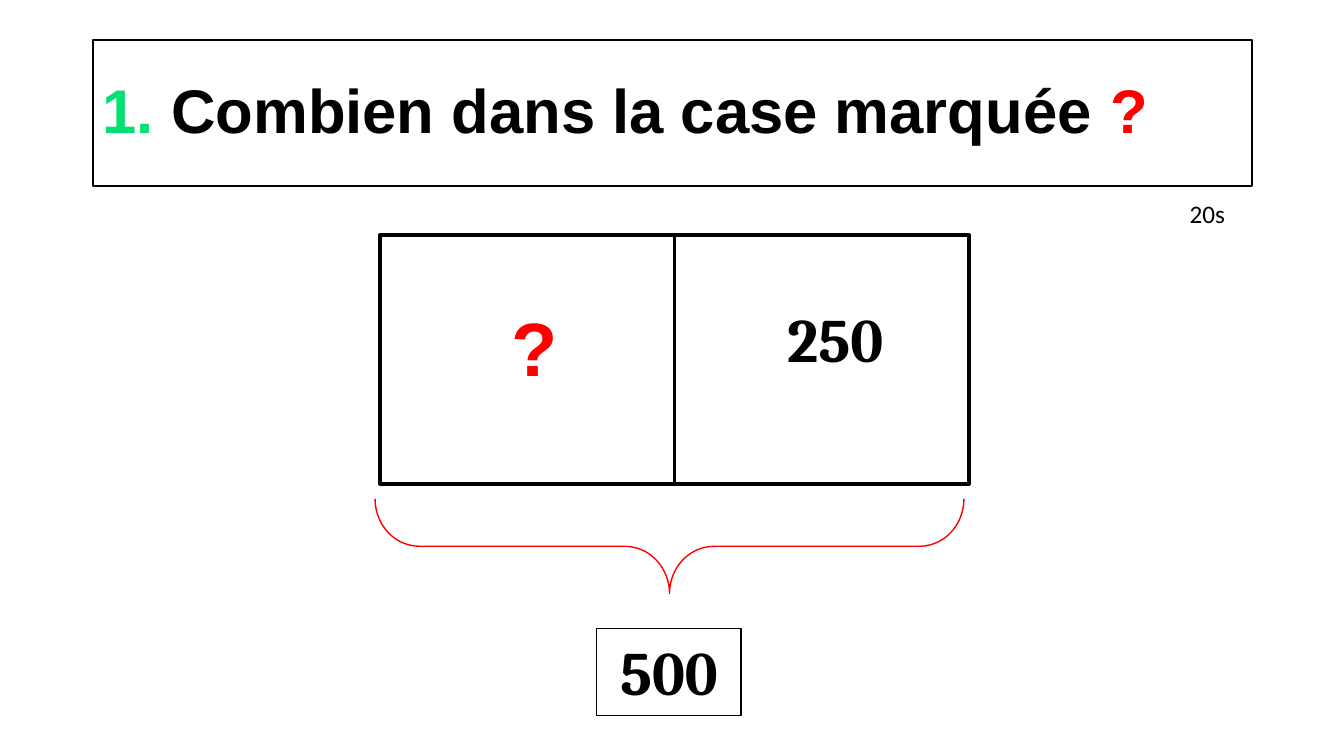
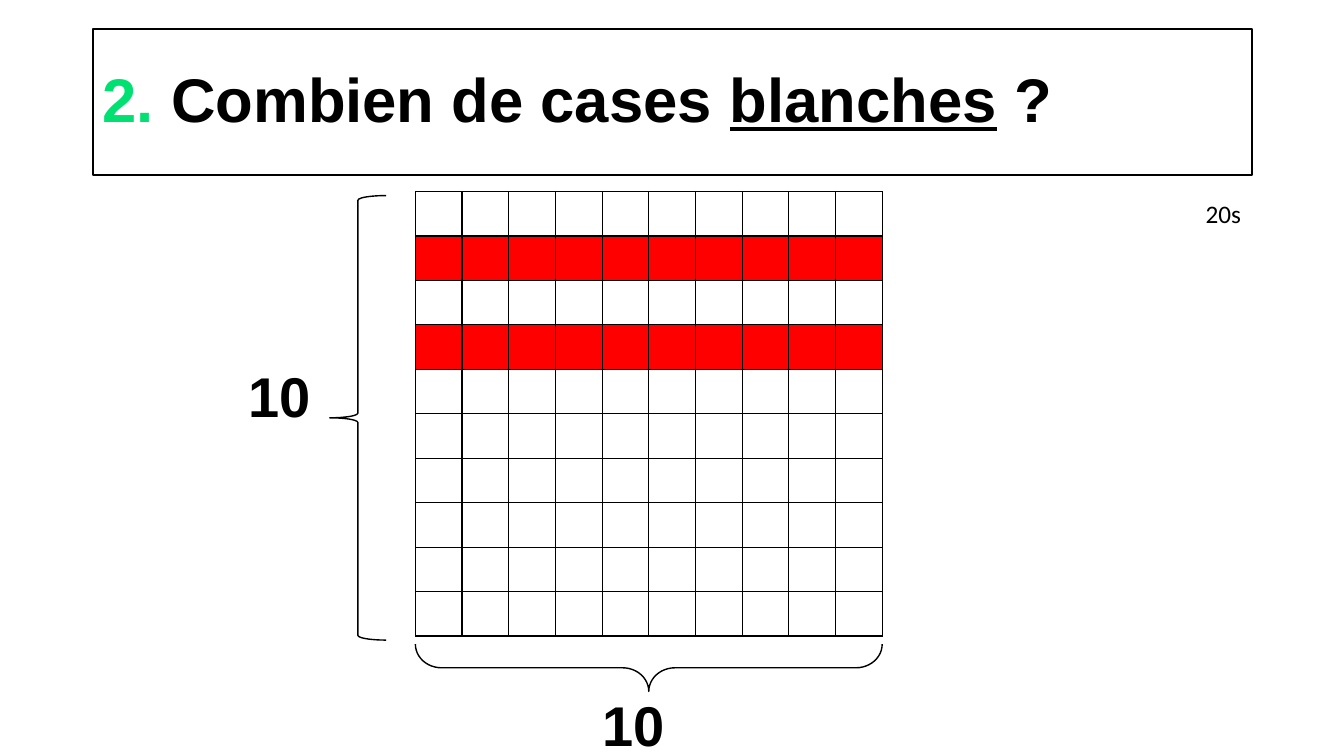
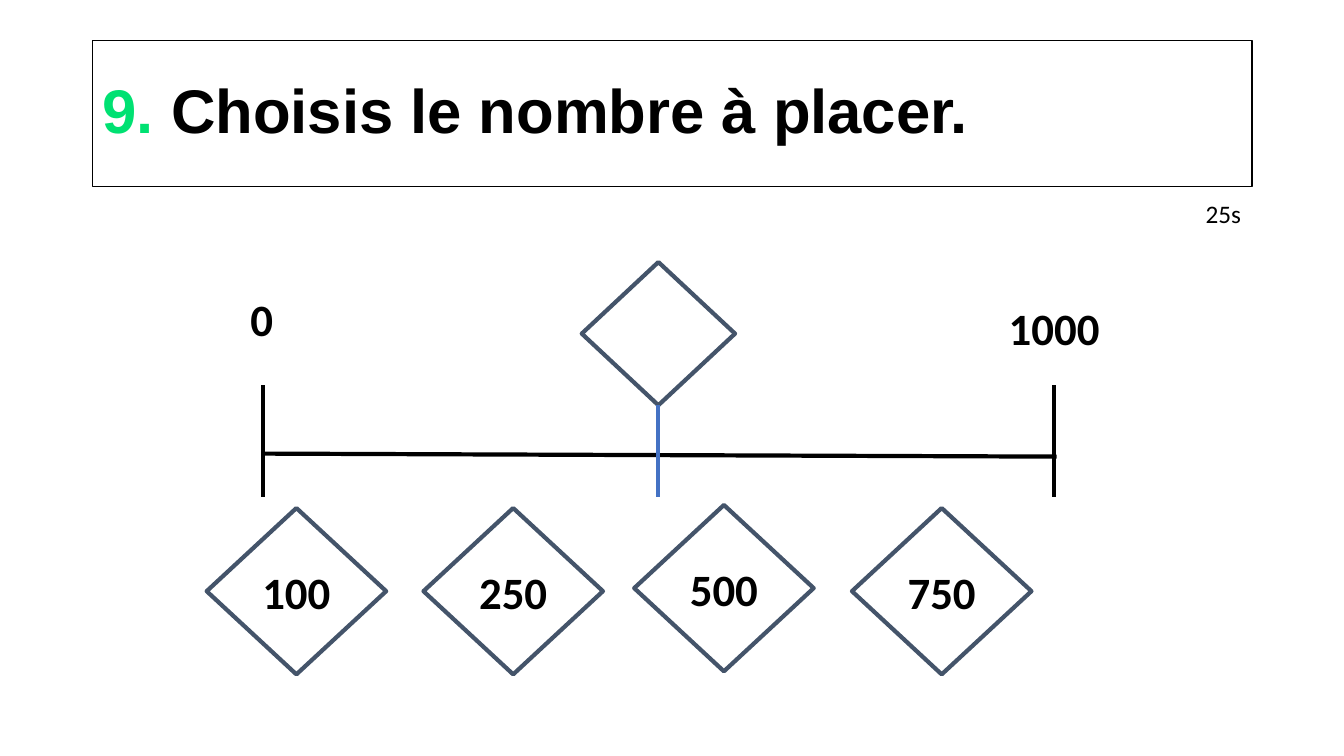
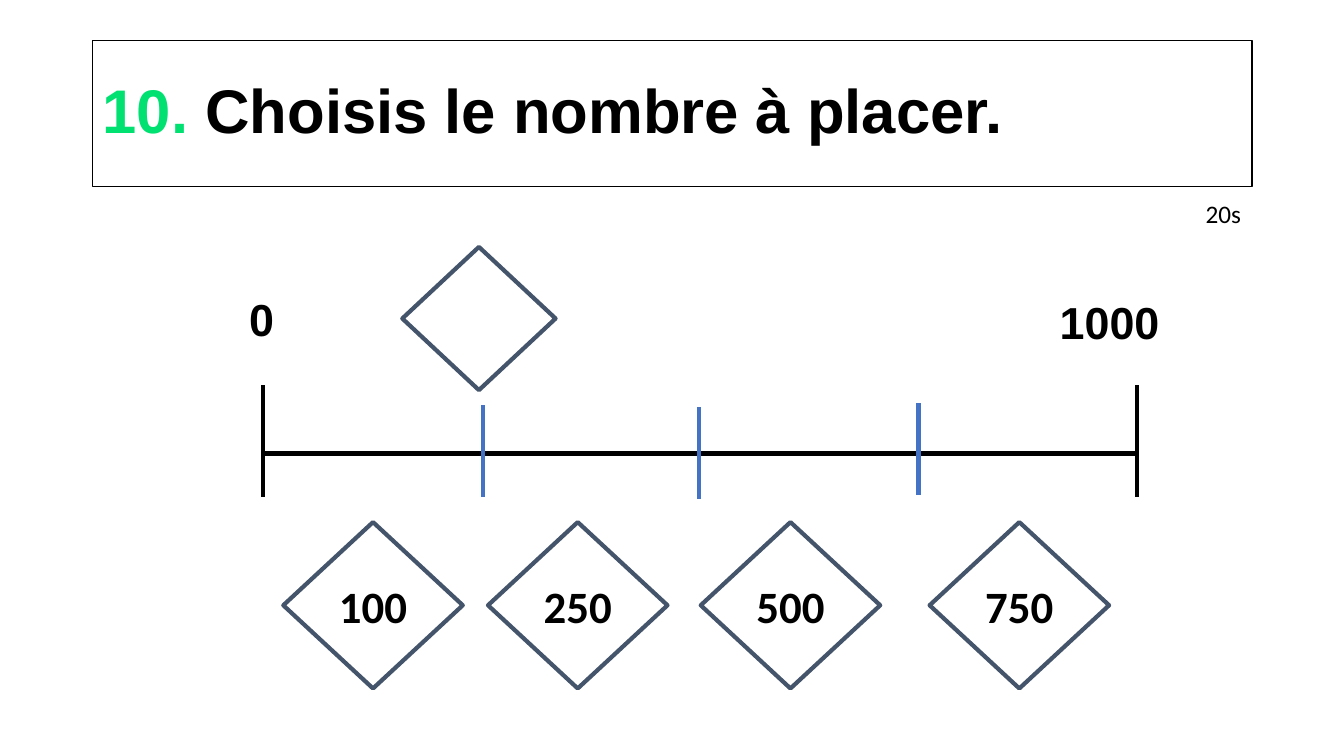
from lxml import etree
from pptx import Presentation
from pptx.dml.color import RGBColor
from pptx.enum.shapes import MSO_CONNECTOR, MSO_SHAPE as SHAPE
from pptx.enum.text import MSO_ANCHOR as ANCHOR, PP_ALIGN as ALIGN
from pptx.oxml.ns import qn
from pptx.util import Inches, Pt

# Shared look
BLACK = RGBColor(0x00, 0x00, 0x00)
WHITE = RGBColor(0xFF, 0xFF, 0xFF)
RED = RGBColor(0xFF, 0x00, 0x00)
GREEN = RGBColor(0x00, 0xE1, 0x72)
BLUE = RGBColor(0x44, 0x72, 0xC4)
SLATE = RGBColor(0x44, 0x54, 0x6A)
SLIDE_W, SLIDE_H = 13.33, 7.5
TITLE_LEFT, TITLE_W, TITLE_H = 0.92, 11.5, 1.45

# Bar model: two equal parts and their total
BAR = {
    "title": [("1. ", GREEN), ("Combien dans la case marquée ", BLACK), ("?", RED)],
    "title_top": 0.4, "title_line": 1.5, "time": "20s", "time_left": 11.7,
    "left": 3.77, "top": 2.33, "part": (2.92, 2.47), "parts": 2,
    "labels": [("?", (4.52, 2.94, 1.56, 1.01), 54, "Arial", RED),
               ("250", (7.57, 2.94, 1.43, 0.84), 44, "Cambria", BLACK)],
    "brace": (6.17, 2.5, 0.94, 5.84),
    "total": ("500", (5.92, 6.24, 1.43, 0.86)),
}

# Grid of squares with some red rows
GRID = {
    "title": [("2. ", GREEN), ("Combien de cases ", BLACK),
              ("blanches", BLACK, True), (" ?", BLACK)],
    "title_top": 0.29, "title_line": 1.5, "time": "20s", "time_left": 11.86,
    "at": (4.12, 1.9, 4.63, 4.41), "count": 10, "red_rows": (1, 3),
    # brace box, rotation, curve, position of the count
    "braces": [((3.27, 1.94, 0.56, 4.41), 0, 0.083, (2.37, 3.54)),
               ((6.2, 4.31, 0.47, 4.63), 270, 0.552, (5.88, 6.8))],
}

# Number lines: ends, marks and the answers to choose from
CHOICE = " Choisis le nombre à placer."
ANSWERS = ("100", "250", "500", "750")
NUMBER_LINES = [
    {
        "title": [("9.", GREEN), (CHOICE, BLACK)],
        "title_top": 0.4, "title_line": 1, "time": "25s", "time_left": 11.86,
        "axis": ((2.61, 4.5), (10.48, 4.53)), "ends": (2.61, 10.45),
        "end_font": "Calibri", "end_labels": [("0", (1.95, 2.84)), ("1000", (9.81, 2.93))],
        "target": (5.77, 2.6), "target_mark": 6.53, "marks": [],
        "answers": [(2.05, 5.04), (4.2, 5.04), (6.29, 5.01), (8.45, 5.04)],
    },
    {
        "title": [("10.", GREEN), (CHOICE, BLACK)],
        "title_top": 0.4, "title_line": 1, "time": "20s", "time_left": 11.86,
        "axis": ((2.61, 4.5), (11.28, 4.5)), "ends": (2.61, 11.28),
        "end_font": "Arial", "end_labels": [("0", (1.95, 2.84)), ("1000", (10.36, 2.87))],
        "target": (3.99, 2.45), "target_mark": None,
        "marks": [(4.79, 4.02), (6.93, 4.04), (9.11, 4.0)],
        "answers": [(2.81, 5.18), (4.84, 5.18), (6.95, 5.18), (9.22, 5.18)],
    },
]
END_TOP, END_BOTTOM, MARK_H = 3.82, 4.93, 0.91
TARGET_SIZE, ANSWER_SIZE, END_LABEL_SIZE = (1.52, 1.42), (1.78, 1.65), (1.29, 0.64)


def write(shape, runs, size, font, bold=True, align=ALIGN.CENTER,
          anchor=ANCHOR.TOP, wrap=True):
    frame = shape.text_frame
    frame.word_wrap = wrap
    frame.vertical_anchor = anchor
    paragraph = frame.paragraphs[0]
    paragraph.alignment = align
    paragraph.font.size = Pt(size)
    paragraph.font.name = font
    paragraph.font.bold = bold
    for text, color, *underline in runs:
        run = paragraph.add_run()
        run.text = text
        run.font.color.rgb = color
        if underline:
            run.font.underline = True
    return paragraph


def add_label(slide, box, text, size, font, color=BLACK, **style):
    label = slide.shapes.add_textbox(*map(Inches, box))
    write(label, [(text, color)], size, font, **style)


def add_outline(slide, kind, box, color, weight, fill=None):
    shape = slide.shapes.add_shape(kind, *map(Inches, box))
    shape.shadow.inherit = False
    if fill is None:
        shape.fill.background()
    else:
        shape.fill.solid()
        shape.fill.fore_color.rgb = fill
    shape.line.color.rgb = color
    shape.line.width = Pt(weight)
    return shape


def add_brace(slide, kind, box, rotation, curve, color):
    brace = add_outline(slide, kind, box, color, 1)
    brace.rotation = rotation
    brace.adjustments[0] = curve


def add_line(slide, start, end, color=BLACK):
    line = slide.shapes.add_connector(MSO_CONNECTOR.STRAIGHT, *map(Inches, start + end))
    line.line.color.rgb = color
    line.line.width = Pt(3)
    etree.SubElement(line._element.spPr, qn("a:effectLst"))
    return line


def add_slide(deck, content):
    """Blank slide with the framed question and its time limit."""
    slide = deck.slides.add_slide(deck.slide_layouts[6])
    box = (TITLE_LEFT, content["title_top"], TITLE_W, TITLE_H)
    title = add_outline(slide, SHAPE.RECTANGLE, box, BLACK, content["title_line"], WHITE)
    write(title, content["title"], 44, "Arial", align=ALIGN.LEFT,
          anchor=ANCHOR.MIDDLE).line_spacing = 0.9
    add_label(slide, (content["time_left"], 1.92, 0.56, 0.4), content["time"], 18,
              "Calibri", bold=False, align=ALIGN.LEFT, wrap=False)
    return slide


def set_borders(cell):
    properties = cell._tc.get_or_add_tcPr()
    for position, side in enumerate(("a:lnL", "a:lnR", "a:lnT", "a:lnB")):
        border = etree.Element(qn(side), w=str(Pt(1)))
        fill = etree.SubElement(border, qn("a:solidFill"))
        etree.SubElement(fill, qn("a:srgbClr"), val=str(BLACK))
        properties.insert(position, border)


def build_bar(deck, bar):
    slide = add_slide(deck, bar)
    width, height = bar["part"]
    for part in range(bar["parts"]):
        box = (bar["left"] + part * width, bar["top"], width, height)
        add_outline(slide, SHAPE.RECTANGLE, box, BLACK, 2.5)
    for text, box, size, font, color in bar["labels"]:
        add_label(slide, box, text, size, font, color)
    add_brace(slide, SHAPE.RIGHT_BRACE, bar["brace"], 90, 0.47, RED)
    text, box = bar["total"]
    total = add_outline(slide, SHAPE.RECTANGLE, box, BLACK, 0.75)
    write(total, [(text, BLACK)], 44, "Cambria")


def build_grid(deck, grid):
    slide = add_slide(deck, grid)
    count = grid["count"]
    squares = slide.shapes.add_table(count, count, *map(Inches, grid["at"])).table
    squares.first_row = squares.horz_banding = False
    for index, row in enumerate(squares.rows):
        for cell in row.cells:
            if index in grid["red_rows"]:
                cell.fill.solid()
                cell.fill.fore_color.rgb = RED
            else:
                cell.fill.background()
            set_borders(cell)
    for box, rotation, curve, count_at in grid["braces"]:
        add_brace(slide, SHAPE.LEFT_BRACE, box, rotation, curve, BLACK)
        add_label(slide, (*count_at, 0.83, 0.7), str(count), 40, "Arial",
                  align=ALIGN.LEFT, wrap=False)


def build_number_line(deck, content):
    slide = add_slide(deck, content)
    add_line(slide, *content["axis"])
    for x in content["ends"]:
        add_line(slide, (x, END_BOTTOM), (x, END_TOP))
    for text, corner in content["end_labels"]:
        add_label(slide, corner + END_LABEL_SIZE, text, 32, content["end_font"])
    for x, top in content["marks"]:
        add_line(slide, (x, top), (x, top + MARK_H), BLUE)
    target = add_outline(slide, SHAPE.DIAMOND, content["target"] + TARGET_SIZE, SLATE, 3)
    if content["target_mark"]:
        x = content["target_mark"]
        mark = add_line(slide, (x, END_BOTTOM - MARK_H), (x, END_BOTTOM), BLUE)
        mark.begin_connect(target, 2)
    for text, corner in zip(ANSWERS, content["answers"]):
        answer = add_outline(slide, SHAPE.DIAMOND, corner + ANSWER_SIZE, SLATE, 3)
        write(answer, [(text, BLACK)], 32, "Calibri", anchor=ANCHOR.MIDDLE)


def main():
    deck = Presentation()
    deck.slide_width, deck.slide_height = Inches(SLIDE_W), Inches(SLIDE_H)
    build_bar(deck, BAR)
    build_grid(deck, GRID)
    for content in NUMBER_LINES:
        build_number_line(deck, content)
    deck.save("out.pptx")


if __name__ == "__main__":
    main()
